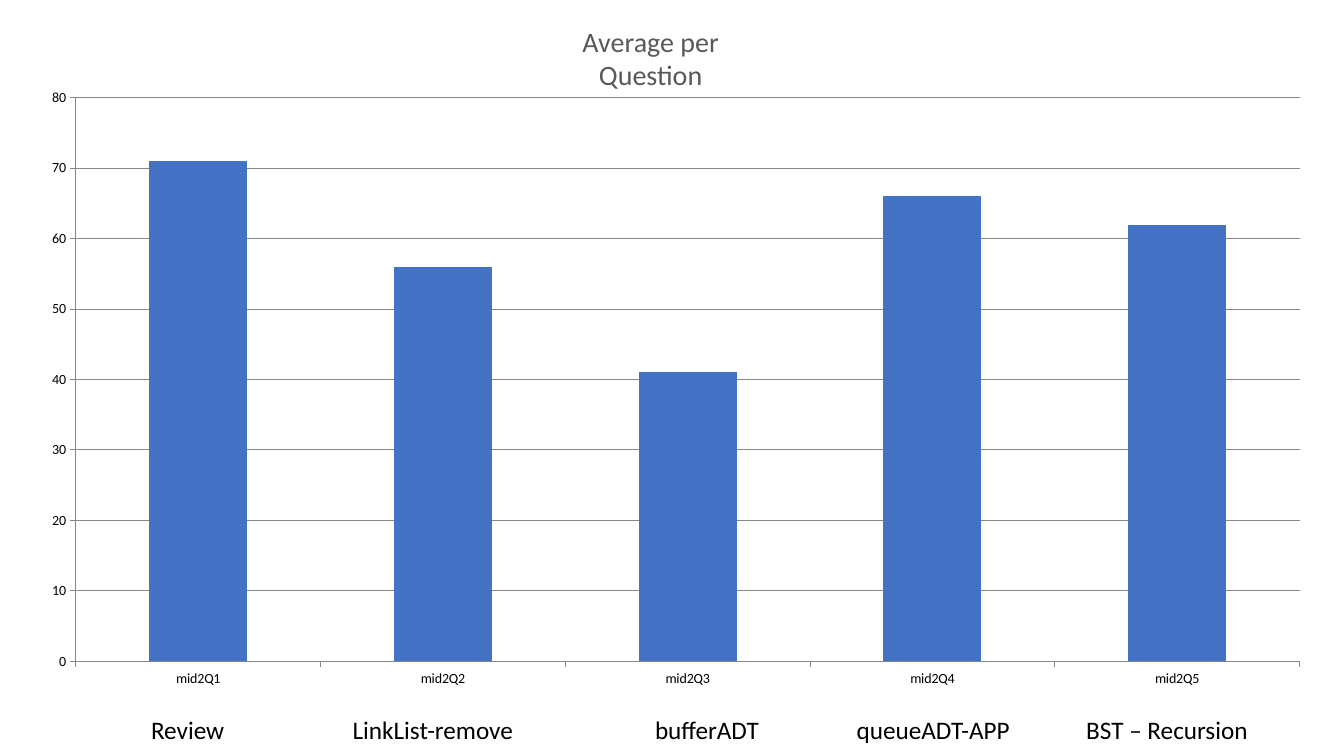
import pptx
import pptx.chart.data
import pptx.dml.color
import pptx.enum.chart
import pptx.enum.text
import pptx.oxml
import pptx.oxml.ns
import pptx.util

Pt = pptx.util.Pt
FONT = "Calibri"
AVERAGES = {"mid2Q1": 71, "mid2Q2": 56, "mid2Q3": 41, "mid2Q4": 66, "mid2Q5": 62}
TOPICS = {
    "Review": 0,
    "LinkList-remove": 144,
    "bufferADT": 360,
    "queueADT-APP": 504,
    "BST – Recursion": 668,
}


def color(hex_value):
    return pptx.dml.color.RGBColor.from_string(hex_value)


def style_font(font, size, hex_value):
    font.name = FONT
    font.size = Pt(size)
    font.color.rgb = color(hex_value)


def add_text(slide, box, text, size, hex_value):
    frame = slide.shapes.add_textbox(*map(Pt, box)).text_frame
    frame.word_wrap = True
    frame.text = text
    paragraph = frame.paragraphs[0]
    style_font(paragraph.runs[0].font, size, hex_value)
    return frame


def add_heading(slide, box):
    heading = add_text(slide, box, "Average per Question", 20, "595959")
    heading.margin_left = heading.margin_right = Pt(12)
    heading.paragraphs[0].alignment = pptx.enum.text.PP_ALIGN.CENTER


def add_topics(slide, box):
    topics = add_text(slide, box, "\t".join(TOPICS), 18, "000000")
    properties = topics.paragraphs[0]._p.get_or_add_pPr()
    stops = pptx.oxml.parse_xml(
        f"<a:tabLst {pptx.oxml.ns.nsdecls('a')}>"
        + "".join(
            f'<a:tab pos="{int(Pt(offset))}" algn="l"/>'
            for offset in TOPICS.values()
            if offset
        )
        + "</a:tabLst>"
    )
    properties.append(stops)


def add_average_chart(slide, box):
    averages = pptx.chart.data.CategoryChartData()
    averages.categories = list(AVERAGES)
    averages.add_series("Series 1", list(AVERAGES.values()))
    chart = slide.shapes.add_chart(
        pptx.enum.chart.XL_CHART_TYPE.COLUMN_CLUSTERED, *map(Pt, box), averages
    ).chart
    chart.has_title = False
    chart.has_legend = False
    style_font(chart.font, 10, "000000")

    columns = chart.plots[0]
    columns.gap_width = 150
    columns.vary_by_categories = False
    fill = columns.series[0].format.fill
    fill.solid()
    fill.fore_color.rgb = color("4472C4")

    scores = chart.value_axis
    scores.minimum_scale, scores.maximum_scale, scores.major_unit = 0, 80, 10
    scores.has_major_gridlines = True
    questions = chart.category_axis
    for axis in (scores, questions):
        axis.major_tick_mark = pptx.enum.chart.XL_TICK_MARK.OUTSIDE
    for rule in (scores, questions, scores.major_gridlines):
        rule.format.line.color.rgb = color("868686")
        rule.format.line.width = Pt(0.75)


def build_results_slide(deck):
    slide = deck.slides.add_slide(deck.slide_layouts[6])
    add_topics(slide, (100.8, 506.9, 843.1, 28.8))
    add_heading(slide, (370.1, 13.7, 189.4, 31.7))
    add_average_chart(slide, (18.7, 55.4, 928.1, 444.2))


def main():
    deck = pptx.Presentation()
    deck.slide_width, deck.slide_height = Pt(960), Pt(540)
    build_results_slide(deck)
    deck.save("out.pptx")


if __name__ == "__main__":
    main()
